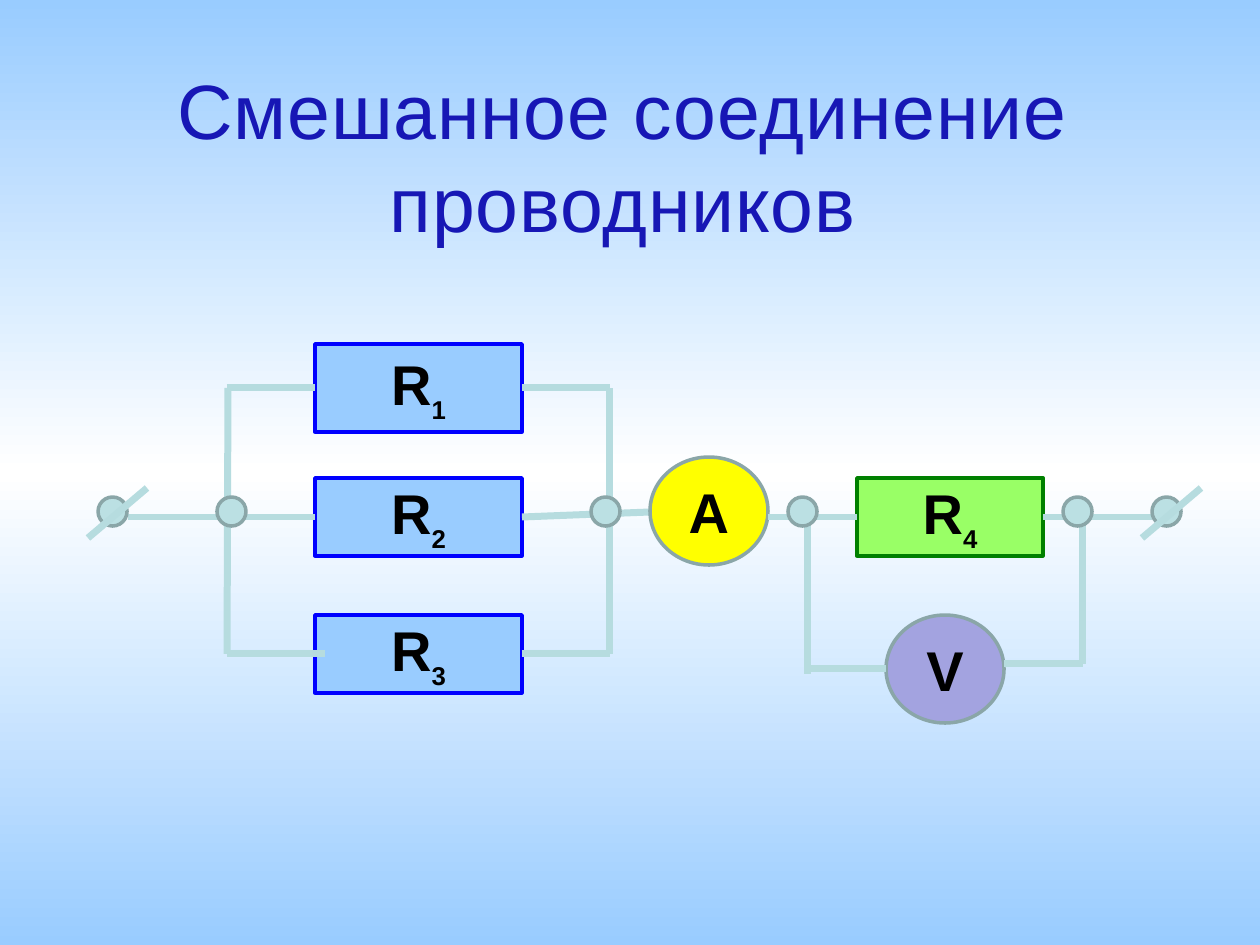
from copy import deepcopy
from dataclasses import dataclass

from lxml import etree
from pptx import Presentation
from pptx.dml.color import RGBColor
from pptx.enum.shapes import MSO_CONNECTOR, MSO_SHAPE
from pptx.enum.text import MSO_ANCHOR, PP_ALIGN
from pptx.oxml.ns import qn
from pptx.util import Pt

RECT = MSO_SHAPE.RECTANGLE
ROUND = MSO_SHAPE.FLOWCHART_CONNECTOR
STRAIGHT = MSO_CONNECTOR.STRAIGHT
MIDDLE = MSO_ANCHOR.MIDDLE
CENTER = PP_ALIGN.CENTER
LEFT, RIGHT = 1, 3  # connection sites of a rectangle
PX_PER_INCH = 126
NODE = 29
METER = (118, 108)


@dataclass(frozen=True)
class Theme:
    font: str = "Arial"
    title_size: int = 44
    label_size: int = 32
    title: str = "1717B5"
    label: str = "000000"
    sky: str = "99CCFF"
    white: str = "FFFFFF"
    blue: str = "0000FF"
    lime: str = "99FF66"
    green: str = "008000"
    yellow: str = "FFFF00"
    violet: str = "A3A3E0"
    node: str = "BBE0E3"
    rim: str = "8AA6A8"
    wire: str = "B6DCDF"
    outline_width: int = 2
    wire_width: int = 4


THEME = Theme()


def px(n):
    return round(n * 914400 / PX_PER_INCH)


def rgb(value):
    return RGBColor.from_string(value)


def add_text(s, text, size=THEME.label_size, color=THEME.label, bold=True,
             sub="", spacing=0):
    """Write centred text, with an optional subscript."""
    tf = s.text_frame
    tf.word_wrap = True
    tf.vertical_anchor = MIDDLE
    p = tf.paragraphs[0]
    p.alignment = CENTER
    for part in filter(None, (text, sub)):
        r = p.add_run()
        r.text = part
        r.font.name = THEME.font
        r.font.size = Pt(size)
        r.font.bold = bold
        r.font.color.rgb = rgb(color)
        if spacing:
            r.font._element.set("spc", str(spacing))
    if sub:
        r.font._element.set("baseline", "-25000")
        r.font._element.set("cap", "small")


def add_part(slide, kind, x, y, w, h, fill, line):
    s = slide.shapes.add_shape(kind, px(x), px(y), px(w), px(h))
    s.shadow.inherit = False
    s.fill.solid()
    s.fill.fore_color.rgb = rgb(fill)
    s.line.color.rgb = rgb(line)
    s.line.width = Pt(THEME.outline_width)
    return s


def add_resistor(slide, box, number, fill, line):
    s = add_part(slide, RECT, *box, fill, line)
    add_text(s, "R", sub=number)
    return s


def add_meter(slide, x, y, letter, fill):
    add_text(add_part(slide, ROUND, x, y, *METER, fill, THEME.rim), letter)


def add_node(slide, x, y):
    add_part(slide, ROUND, x, y, NODE, NODE, THEME.node, THEME.rim)


def add_wire(slide, x1, y1, x2, y2, begin=None, end=None):
    """Draw a wire; begin and end are (shape, site) pairs."""
    c = slide.shapes.add_connector(STRAIGHT, px(x1), px(y1), px(x2), px(y2))
    c.line.color.rgb = rgb(THEME.wire)
    c.line.width = Pt(THEME.wire_width)
    etree.SubElement(c._element.spPr, qn("a:effectLst"))
    if begin:
        c.begin_connect(*begin)
    if end:
        c.end_connect(*end)


def set_background(slide):
    fill = slide.background.fill
    fill.gradient()
    fill.gradient_angle = 270
    stops = fill.gradient_stops
    for stop, position in zip(stops, (0, 1)):
        stop.color.rgb = rgb(THEME.sky)
        stop.position = position
    first = slide.background._cSld.find(".//" + qn("a:gs"))
    first.addnext(deepcopy(first))
    middle = fill.gradient_stops[1]
    middle.color.rgb = rgb(THEME.white)
    middle.position = 0.5


def add_title(slide, x, y, w, h):
    s = slide.shapes.title
    s.left, s.top, s.width, s.height = px(x), px(y), px(w), px(h)
    add_text(s, "Смешанное соединение проводников", size=THEME.title_size,
             color=THEME.title, bold=False, spacing=50)


def add_parallel_bank(slide, x, y, w):
    """Three resistors side by side, from the left rail to the right rail."""
    lead, right = 88, x + w
    body = w - 2 * lead
    r1, r2, r3 = [
        add_resistor(slide, (x + lead, y + top, body, h), number,
                     THEME.sky, THEME.blue)
        for number, top, h in (("1", 0, 88), ("2", 134, 78), ("3", 271, 78))]
    upper, centre, lower = y + 44, y + 173, y + 310

    # Leads
    for r, level in ((r1, upper), (r2, centre)):
        add_wire(slide, x, level, x + lead, level, end=(r, LEFT))
    add_wire(slide, x, lower, x + lead + 10, lower)
    for r, level in ((r1, upper), (r3, lower)):
        add_wire(slide, right - lead, level, right, level, begin=(r, RIGHT))
    add_wire(slide, right - lead, centre, right + 40, centre - 5,
             begin=(r2, RIGHT))

    # Rails and their nodes
    add_wire(slide, x, lower, x + 1, upper)
    add_wire(slide, right, lower, right, upper)
    for node_x in (x - 10, right - 19):
        add_node(slide, node_x, y + 153)


def add_measured_resistor(slide, x, y, w):
    """Resistor between two nodes, with a voltmeter across it."""
    r4 = add_resistor(slide, (x + 49, y, 186, 78), "4",
                      THEME.lime, THEME.green)
    centre, right = y + 39, x + w
    add_meter(slide, x + 78, y + 137, "V", THEME.violet)

    # Main line
    add_wire(slide, x - 40, centre, x + 49, centre, end=(r4, LEFT))
    add_wire(slide, x + 235, centre, right + 69, centre, begin=(r4, RIGHT))

    # Voltmeter branch
    add_wire(slide, x, y + 196, x, centre)
    add_wire(slide, x, y + 191, x + 78, y + 191)
    add_wire(slide, x + 196, y + 186, right, y + 186)
    add_wire(slide, right, y + 186, right, centre)
    for rail in (x, right):
        add_node(slide, rail - 20, y + 19)


def add_terminal(slide, x, y):
    """Node crossed by a slash."""
    add_node(slide, x, y)
    add_wire(slide, x - 10, y + 41, x + 49, y - 9)


def main():
    prs = Presentation()
    prs.slide_width, prs.slide_height = px(1260), px(945)
    slide = prs.slides.add_slide(prs.slide_layouts[5])
    set_background(slide)
    add_title(slide, 59, 49, 1128, 212)

    # Circuit from left to right
    add_wire(slide, 128, 517, 217, 517)
    add_parallel_bank(slide, 227, 344, 383)
    add_meter(slide, 650, 457, "А", THEME.yellow)
    add_measured_resistor(slide, 808, 478, 275)
    add_terminal(slide, 98, 497)
    add_terminal(slide, 1152, 497)
    slide_end = "out.pptx"
    prs.save("out.pptx")


if __name__ == "__main__":
    main()
